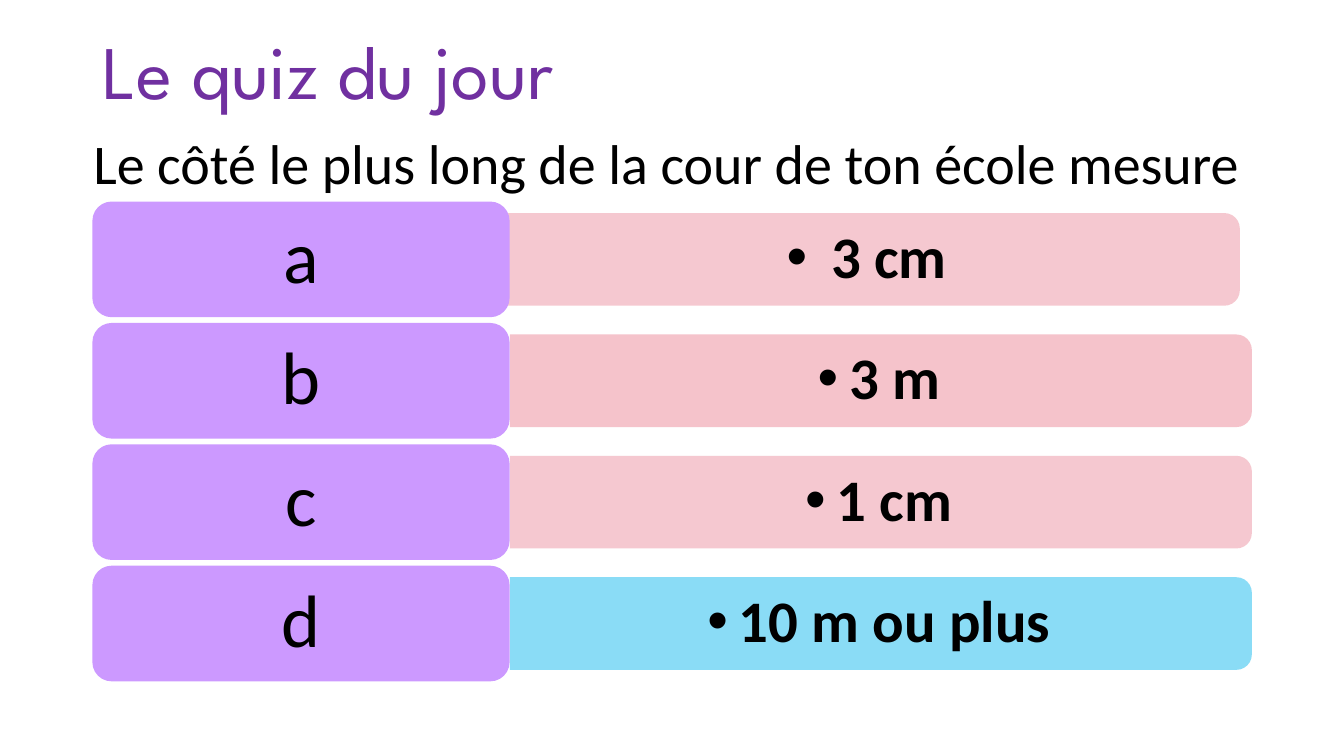
from dataclasses import dataclass

from lxml.etree import SubElement
from pptx import Presentation
from pptx.dml.color import RGBColor
from pptx.enum.shapes import MSO_SHAPE as Preset
from pptx.enum.text import MSO_ANCHOR as Anchor, PP_ALIGN as Align
from pptx.oxml.ns import qn
from pptx.shapes.autoshape import Shape
from pptx.slide import Slide
from pptx.util import Pt

COLOURS = {
    "title": "7030A0",
    "text": "000000",
    "label": "CC99FF",
    "wrong": "F5C3CB",
    "right": "7ED9F6",
}

ROW_TOP, ROW_PITCH = 144, 86.7
LABEL_LEFT, LABEL_WIDTH, LABEL_HEIGHT = 66, 298, 82.6
BAR_LENGTH, BAR_THICKNESS = 530, 66.2
ANSWER_WIDTH, ANSWER_HEIGHT = 527, 60
BULLET_INDENT = 22.5


@dataclass(frozen=True)
class Choice:
    letter: str
    answer: str
    colour: str = "wrong"
    opacity: int = 90
    bar_left: float = 364.2


CHOICES = [
    Choice("a", " 3 cm", bar_left=355.6),
    Choice("b", "3 m", opacity=100),
    Choice("c", "1 cm"),
    Choice("d", "10 m ou plus", colour="right"),
]


def write(shape: Shape, text: str, size: float, font: str = "Calibri",
          colour: str = "text", bold: bool = False,
          align: Align = Align.CENTER, spacing: float = 0.9,
          anchor: Anchor = Anchor.MIDDLE) -> None:
    """Fill the shape with one formatted paragraph."""
    frame = shape.text_frame
    frame.text = text
    frame.word_wrap = True
    frame.vertical_anchor = anchor
    paragraph = frame.paragraphs[0]
    paragraph.alignment = align
    paragraph.line_spacing = spacing
    run_font = paragraph.runs[0].font
    run_font.name = font
    run_font.size = Pt(size)
    run_font.bold = bold
    run_font.color.rgb = RGBColor.from_string(COLOURS[colour])


def set_insets(shape: Shape, horizontal: float, vertical: float) -> None:
    frame = shape.text_frame
    frame.margin_left = frame.margin_right = Pt(horizontal)
    frame.margin_top = frame.margin_bottom = Pt(vertical)


def add_bullet(shape: Shape) -> None:
    properties = shape.text_frame.paragraphs[0]._p.get_or_add_pPr()
    properties.set("marL", str(Pt(BULLET_INDENT)))
    properties.set("indent", str(-Pt(BULLET_INDENT)))
    SubElement(properties, qn("a:buFont")).set("typeface", "Arial")
    SubElement(properties, qn("a:buChar")).set("char", "•")


def add_filled(slide: Slide, preset: Preset, left: float, top: float,
               width: float, height: float, colour: str,
               opacity: int = 100) -> Shape:
    shape = slide.shapes.add_shape(preset, Pt(left), Pt(top), Pt(width), Pt(height))
    shape.shadow.inherit = False
    shape.line.fill.background()
    shape.fill.solid()
    shape.fill.fore_color.rgb = RGBColor.from_string(COLOURS[colour])
    if opacity < 100:
        colour_element = shape.fill._xPr.find(".//" + qn("a:srgbClr"))
        SubElement(colour_element, qn("a:alpha")).set("val", str(opacity * 1000))
    return shape


def add_choice(slide: Slide, choice: Choice, top: float) -> None:
    middle = top + LABEL_HEIGHT / 2

    # The bar is an upright shape turned a quarter, so its rounded end faces right.
    centre = choice.bar_left + BAR_LENGTH / 2
    bar = add_filled(slide, Preset.ROUND_2_SAME_RECTANGLE,
                     centre - BAR_THICKNESS / 2, middle - BAR_LENGTH / 2,
                     BAR_THICKNESS, BAR_LENGTH, choice.colour, choice.opacity)
    bar.rotation = 90

    answer = slide.shapes.add_textbox(
        Pt(choice.bar_left), Pt(middle - ANSWER_HEIGHT / 2),
        Pt(ANSWER_WIDTH), Pt(ANSWER_HEIGHT))
    write(answer, choice.answer, 42, bold=True)
    set_insets(answer, 12.6, 6.3)
    add_bullet(answer)

    label = add_filled(slide, Preset.ROUNDED_RECTANGLE, LABEL_LEFT, top,
                       LABEL_WIDTH, LABEL_HEIGHT, "label")
    write(label, choice.letter, 53)
    set_insets(label, 16, 8)


def main() -> None:
    presentation = Presentation()
    presentation.slide_width, presentation.slide_height = Pt(960), Pt(540)
    slide = presentation.slides.add_slide(presentation.slide_layouts[5])

    title = slide.shapes.title
    title.left, title.top, title.width, title.height = Pt(66), Pt(19.4), Pt(828), Pt(69)
    write(title, "Le quiz du jour", 54, "League Spartan", "title", align=Align.LEFT)

    for row, choice in enumerate(CHOICES):
        add_choice(slide, choice, ROW_TOP + row * ROW_PITCH)

    question = slide.shapes.add_textbox(Pt(34.6), Pt(88.6), Pt(891.4), Pt(55.4))
    write(question, "Le côté le plus long de la cour de ton école mesure ", 40,
          spacing=1.0, anchor=Anchor.TOP)

    presentation.save("out.pptx")


if __name__ == "__main__":
    main()
